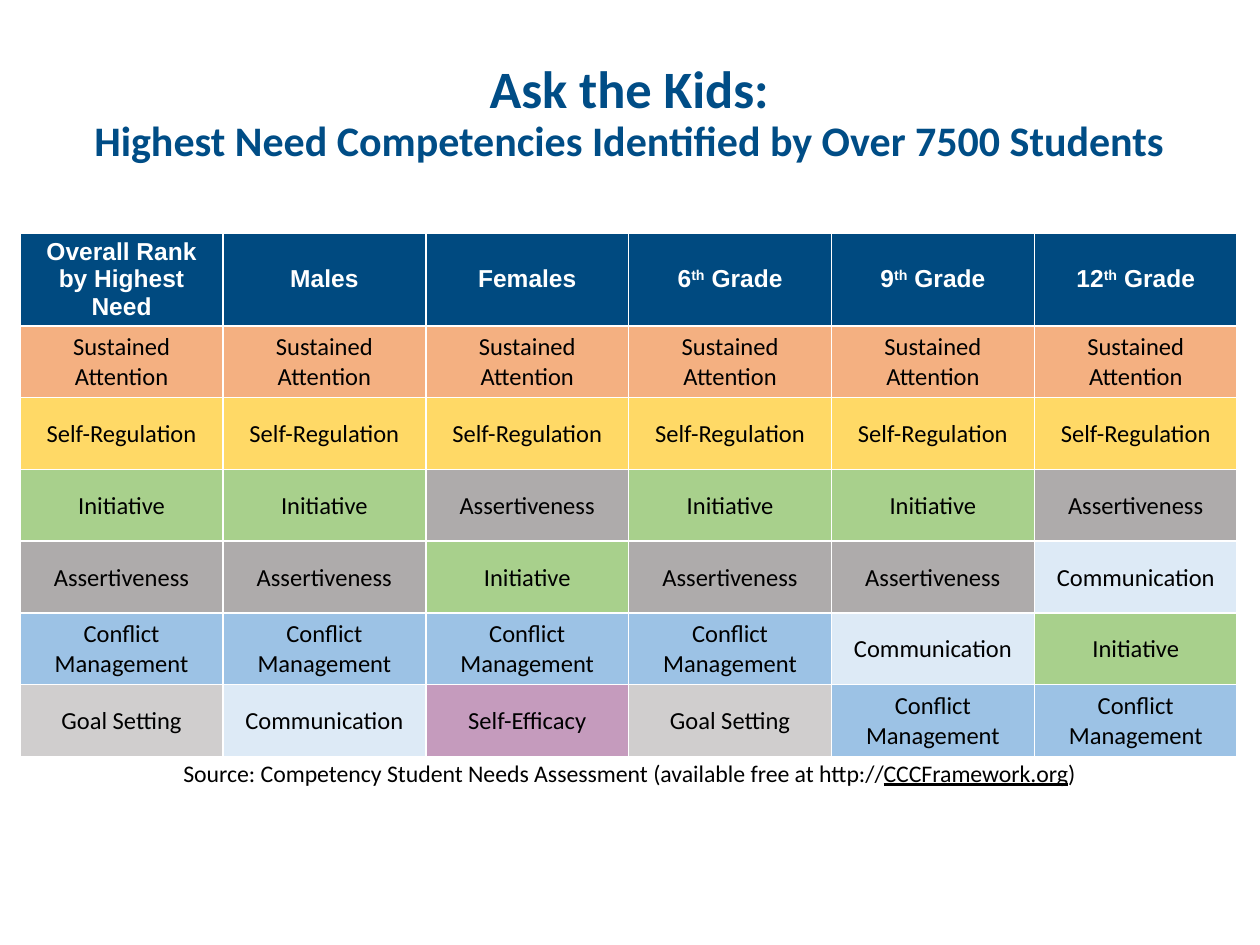
import pptx
import pptx.dml.color
import pptx.enum.text
import pptx.util

Inches, Pt = pptx.util.Inches, pptx.util.Pt
RGBColor = pptx.dml.color.RGBColor
MSO_ANCHOR = pptx.enum.text.MSO_ANCHOR
MSO_AUTO_SIZE = pptx.enum.text.MSO_AUTO_SIZE
CENTER = pptx.enum.text.PP_ALIGN.CENTER

TITLE_BLUE = RGBColor(0x00, 0x4D, 0x86)
HEADER_BLUE = RGBColor(0x00, 0x4A, 0x80)
WHITE = RGBColor(0xFF, 0xFF, 0xFF)
BLACK = RGBColor(0x00, 0x00, 0x00)
ORANGE = RGBColor(0xF4, 0xB0, 0x81)
YELLOW = RGBColor(0xFF, 0xD9, 0x66)
GREEN = RGBColor(0xA8, 0xD0, 0x8C)
GRAY = RGBColor(0xAE, 0xAB, 0xAB)
BLUE = RGBColor(0x9C, 0xC2, 0xE5)
PALE_BLUE = RGBColor(0xDD, 0xEA, 0xF6)
PALE_GRAY = RGBColor(0xD0, 0xCE, 0xCE)
PURPLE = RGBColor(0xC5, 0x9B, 0xBD)

# Each competency keeps one colour throughout the table
COMPETENCIES = {
    "Sustained\vAttention": ORANGE,
    "Self-Regulation": YELLOW,
    "Initiative": GREEN,
    "Assertiveness": GRAY,
    "Conflict Management": BLUE,
    "Communication": PALE_BLUE,
    "Goal Setting": PALE_GRAY,
    "Self-Efficacy": PURPLE,
}
ATTENTION, REGULATION, INITIATIVE, ASSERTIVE, CONFLICT, COMMUNICATION, GOALS, EFFICACY = COMPETENCIES

# Header runs: every second run is superscript
HEADERS = [
    ["Overall Rank by Highest Need"], ["Males"], ["Females"],
    ["6", "th", " Grade"], ["9", "th", " Grade"], ["12", "th", " Grade"],
]
RANKS = [
    [ATTENTION] * 6,
    [REGULATION] * 6,
    [INITIATIVE, INITIATIVE, ASSERTIVE, INITIATIVE, INITIATIVE, ASSERTIVE],
    [ASSERTIVE, ASSERTIVE, INITIATIVE, ASSERTIVE, ASSERTIVE, COMMUNICATION],
    [CONFLICT] * 4 + [COMMUNICATION, INITIATIVE],
    [GOALS, COMMUNICATION, EFFICACY, GOALS, CONFLICT, CONFLICT],
]

LEFT, WIDTH = 0.16, 9.67
COL_WIDTH, ROW_HEIGHT = 1.61, 0.57


class SlideBuilder:
    body_font = "Calibri"
    header_font = "Arial"
    cell_size = 14

    def __init__(self, prs):
        self.slide = prs.slides.add_slide(prs.slide_layouts[5])

    def format(self, p, name, size, color, bold=False):
        p.alignment = CENTER
        p.font.name, p.font.size, p.font.bold = name, Pt(size), bold
        p.font.color.rgb = color

    def title(self, top, height, heading, subheading):
        sp = self.slide.shapes.title
        sp.left, sp.top = Inches(LEFT), Inches(top)
        sp.width, sp.height = Inches(WIDTH), Inches(height)
        tf = sp.text_frame
        tf.auto_size = MSO_AUTO_SIZE.NONE
        tf.vertical_anchor = MSO_ANCHOR.MIDDLE
        p = tf.paragraphs[0]
        p.line_spacing = 0.9
        self.format(p, self.body_font, 24, TITLE_BLUE, bold=True)
        r = p.add_run()
        r.text = heading
        r.font.size = Pt(30)
        p.add_line_break()
        r = p.add_run()
        r.text = subheading
        r.font.size = Pt(24)

    def header_cell(self, cell, parts):
        cell.margin_left = cell.margin_right = Inches(0.07)
        cell.margin_top = cell.margin_bottom = Inches(0.04)
        p = cell.text_frame.paragraphs[0]
        self.format(p, self.header_font, self.cell_size, WHITE, bold=True)
        for i, part in enumerate(parts):
            r = p.add_run()
            r.text = part
            if i % 2:
                r._r.get_or_add_rPr().set("baseline", "30000")
        self.fill_cell(cell, HEADER_BLUE)

    def rank_cell(self, cell, competency):
        cell.margin_left = cell.margin_right = cell.margin_top = Inches(0.01)
        cell.margin_bottom = 0
        cell.text = competency
        self.format(cell.text_frame.paragraphs[0], self.body_font, self.cell_size, BLACK)
        self.fill_cell(cell, COMPETENCIES[competency])

    def fill_cell(self, cell, color):
        cell.vertical_anchor = MSO_ANCHOR.MIDDLE
        cell.fill.solid()
        cell.fill.fore_color.rgb = color

    def table(self, top, headers, ranks):
        n_rows, n_cols = len(ranks) + 1, len(headers)
        table = self.slide.shapes.add_table(
            n_rows, n_cols, Inches(LEFT), Inches(top),
            Inches(WIDTH), Inches(n_rows * ROW_HEIGHT)).table
        table.horz_banding = False
        for column in table.columns:
            column.width = Inches(COL_WIDTH)
        for row in table.rows:
            row.height = Inches(ROW_HEIGHT)
        for col, parts in enumerate(headers):
            self.header_cell(table.cell(0, col), parts)
        for row, competencies in enumerate(ranks, start=1):
            for col, competency in enumerate(competencies):
                self.rank_cell(table.cell(row, col), competency)

    def source(self, top, height, before, site, after):
        sp = self.slide.shapes.add_textbox(
            Inches(LEFT), Inches(top), Inches(WIDTH), Inches(height))
        tf = sp.text_frame
        tf.word_wrap = True
        tf.auto_size = MSO_AUTO_SIZE.SHAPE_TO_FIT_TEXT
        p = tf.paragraphs[0]
        self.format(p, self.body_font, 13.6, BLACK)
        for text in (before, site, after):
            r = p.add_run()
            r.text = text
            if text == site:
                r.font.underline = True


def main():
    prs = pptx.Presentation()
    prs.slide_width, prs.slide_height = Inches(10), Inches(7.5)
    s = SlideBuilder(prs)

    # Title
    s.title(0.4, 1.02, "Ask the Kids:",
            "Highest Need Competencies Identified by Over 7500 Students")

    # Ranking table
    s.table(1.85, HEADERS, RANKS)

    # Source line
    s.source(5.97, 0.33,
             "Source: Competency Student Needs Assessment (available free at http://",
             "CCCFramework.org", ")")

    prs.save("out.pptx")


if __name__ == "__main__":
    main()
